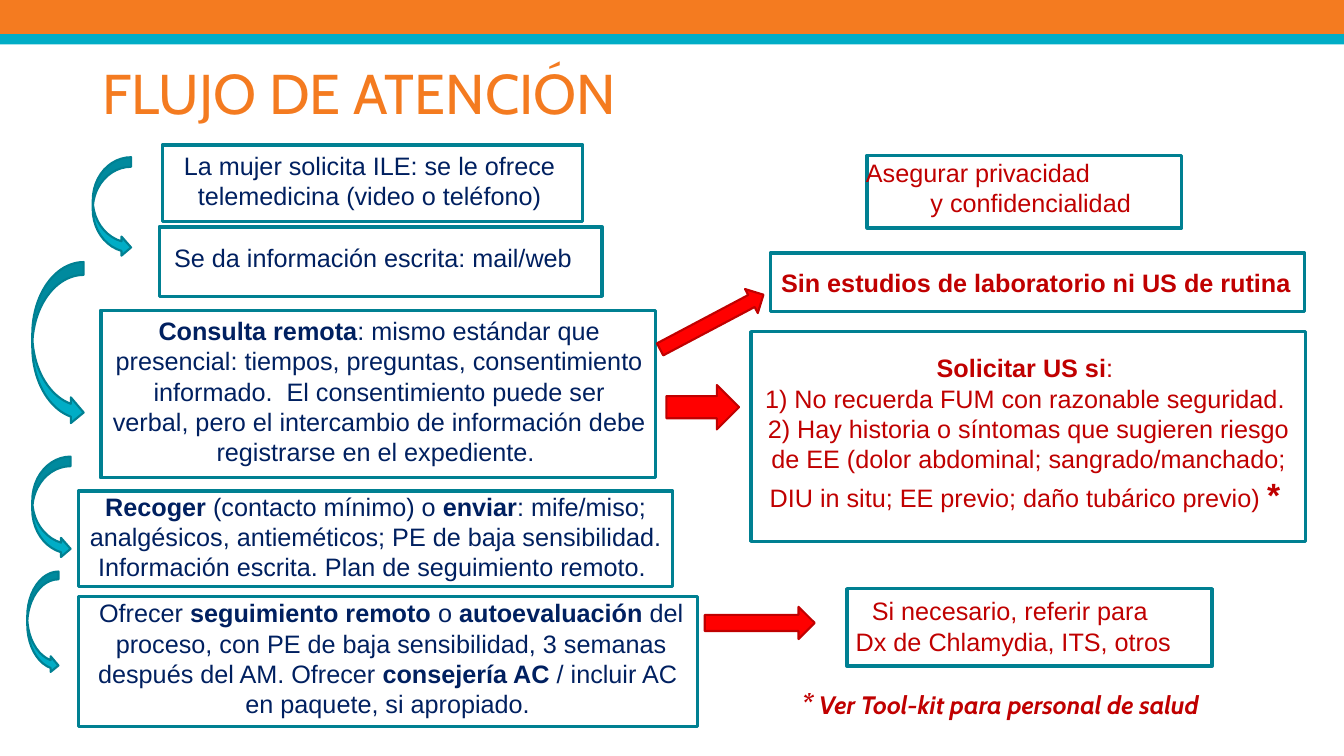
"""Builds the slide on the flow of remote care."""
from pptx import Presentation
from pptx import util as u
from pptx.dml import color
from pptx.enum import shapes, text

HUES = {"orange": "F47B20", "aqua": "00ADC6", "teal": "008092",
        "navy": "002060", "wine": "C00000", "red": "FF0000"}
KIND = shapes.MSO_SHAPE
ALIGN = text.PP_ALIGN

deck = Presentation()
deck.slide_width, deck.slide_height = u.Inches(13.33), u.Inches(7.5)
slide = deck.slides.add_slide(deck.slide_layouts[6])


def draw(kind, place, fill=None, line=None, width=1.5, turn=0):
    """Draws a preset shape; no fill or line unless a hue is named."""
    shape = slide.shapes.add_shape(kind, *map(u.Inches, place))
    shape.shadow.inherit = False
    shape.rotation = turn
    if fill:
        shape.fill.solid()
        shape.fill.fore_color.rgb = color.RGBColor.from_string(HUES[fill])
    else:
        shape.fill.background()
    if line:
        shape.line.color.rgb = color.RGBColor.from_string(HUES[line])
        shape.line.width = u.Pt(width)
    else:
        shape.line.fill.background()


def write(place, words, hue="navy", size=18, face="Arial", align=ALIGN.CENTER,
          italic=False, wrap=True, anchor=text.MSO_ANCHOR.TOP):
    """Writes one paragraph per line; bars switch bold on and off."""
    frame = slide.shapes.add_textbox(*map(u.Inches, place)).text_frame
    frame.word_wrap = wrap
    frame.vertical_anchor = anchor
    for i, line in enumerate(words.split("\n")):
        para = frame.paragraphs[0] if i == 0 else frame.add_paragraph()
        para.alignment = align
        for j, part in enumerate(line.split("|")):
            if part:
                run = para.add_run()
                run.text = part
                run.font.name, run.font.size = face, u.Pt(size)
                run.font.bold, run.font.italic = j % 2 == 1, italic
                run.font.color.rgb = color.RGBColor.from_string(HUES[hue])
    return frame.paragraphs


draw(KIND.RECTANGLE, (0, 0, 13.33, 0.34), "orange")
draw(KIND.RECTANGLE, (0, 0.34, 13.33, 0.1), "aqua")
write((0.92, 0.33, 12, 1.17), "FLUJO DE ATENCIÓN", "orange", 40, "Cabin",
      ALIGN.LEFT, anchor=text.MSO_ANCHOR.MIDDLE)

frames = [
    (1.61, 1.44, 4.17, 0.76), (1.58, 2.25, 4.39, 0.69), (1, 3.08, 5.5, 1.66),
    (0.78, 4.87, 5.89, 0.95), (0.78, 5.92, 6.14, 1.29),
    (8.6, 1.54, 3.12, 0.72), (7.64, 2.51, 5.3, 0.58),
    (7.45, 3.29, 5.5, 2.08), (8.4, 5.84, 3.62, 0.77),
]
for place in frames:
    draw(KIND.RECTANGLE, place, line="teal", width=2.5)

steps = [
    ((1.58, 1.44, 4.17, 0.71),
     "La mujer solicita ILE: se le ofrece telemedicina (video o teléfono)"),
    ((1.47, 2.35, 4.53, 0.4), "Se da información escrita: mail/web "),
    ((1.02, 3.08, 5.48, 1.62),
     "|Consulta remota|: mismo estándar que presencial: tiempos, preguntas, "
     "consentimiento informado.  El consentimiento puede ser verbal, pero el "
     "intercambio de información debe registrarse en el expediente. "),
    ((0.78, 4.82, 5.89, 1.01),
     "|Recoger| (contacto mínimo) o |enviar|: mife/miso; analgésicos, "
     "antieméticos; PE de baja sensibilidad. Información escrita. "
     "Plan de seguimiento remoto. "),
    ((0.75, 5.88, 6.26, 1.31),
     "Ofrecer |seguimiento remoto |o |autoevaluación| del proceso, con PE de "
     "baja sensibilidad, 3 semanas después del AM. Ofrecer |consejería AC |"
     "/ incluir AC \nen paquete, si apropiado. "),
]
for place, words in steps:
    write(place, words)

bends = [(0.92, 1.56, 0.38, 0.99), (0.32, 2.6, 0.51, 1.62),
         (0.32, 4.53, 0.38, 1.01), (0.27, 5.67, 0.31, 1.01)]
for place in bends:
    draw(KIND.CURVED_RIGHT_ARROW, place, "aqua", "teal")

arrows = [((6.48, 3.06, 1.16, 0.27), 332.1), ((6.61, 3.82, 0.72, 0.44), 0),
          ((6.99, 6.02, 1.09, 0.32), 0)]
for place, turn in arrows:
    draw(KIND.RIGHT_ARROW, place, "red", "wine", turn=turn)

safe = write((8.49, 1.51, 3.12, 0.71),
             "Asegurar privacidad\ny confidencialidad", "wine", align=ALIGN.LEFT)
safe[1]._p.get_or_add_pPr().set("marL", str(u.Inches(0.64)))
write((7.55, 2.6, 5.45, 0.4),
      "|Sin estudios de laboratorio ni US de rutina|", "wine")
scan = write((7.45, 3.45, 5.5, 1.72),
             "|Solicitar US si|: \n1) No recuerda FUM con razonable seguridad. \n"
             "2) Hay historia o síntomas que sugieren riesgo de EE (dolor "
             "abdominal; sangrado/manchado; DIU in situ; EE previo; daño "
             "tubárico previo) |*| ", "wine")
scan[2].runs[1].font.size = u.Pt(24)
write((8.36, 5.86, 3.38, 0.71),
      "Si necesario, referir para \nDx de Chlamydia, ITS, otros", "wine")
note = write((7.85, 6.76, 4.63, 0.44),
             "|*|| Ver Tool-kit para personal de salud|", "wine", face="Cabin",
             align=ALIGN.LEFT, italic=True, wrap=False)
note[0].runs[0].font.size = u.Pt(20)

deck.save("out.pptx")
